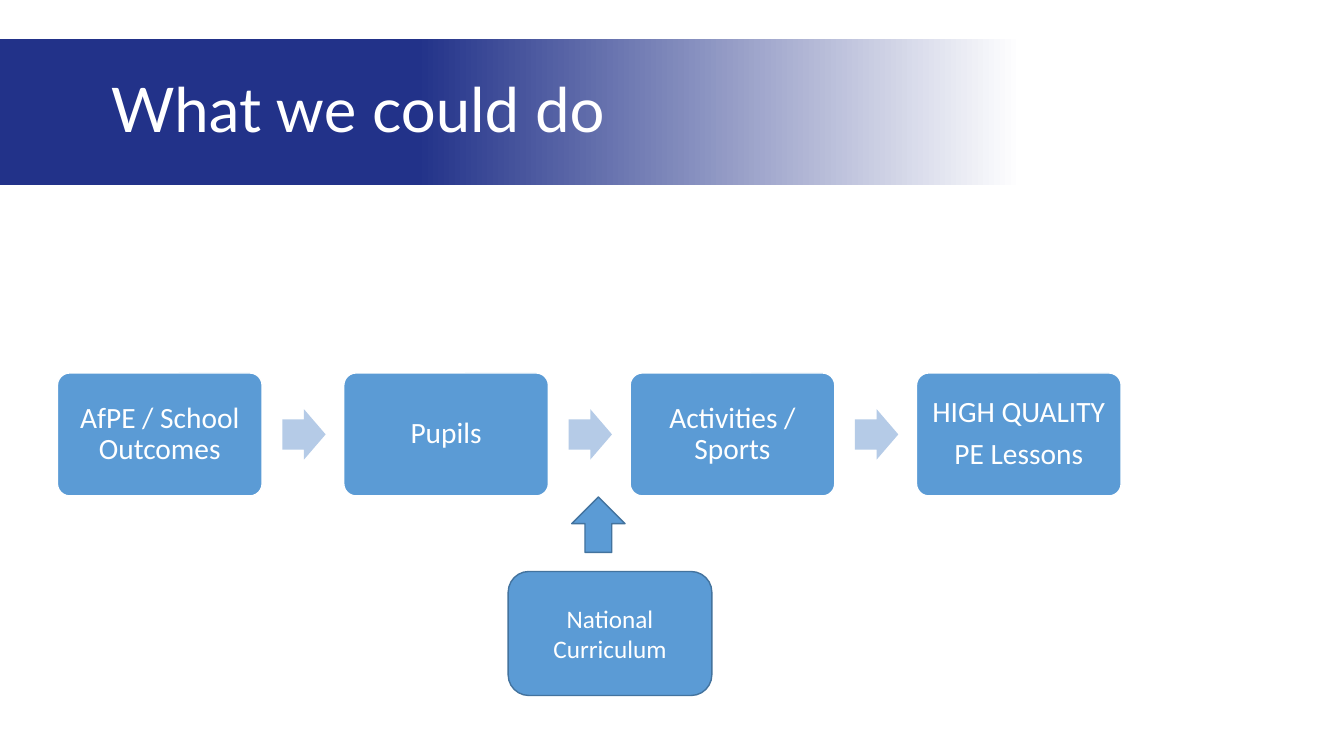
from copy import deepcopy
from pptx import Presentation
from pptx.dml.color import RGBColor
from pptx.enum.shapes import MSO_SHAPE as Kind
from pptx.enum.text import MSO_ANCHOR as Anchor, MSO_AUTO_SIZE as Fit, PP_ALIGN as Align
from pptx.util import Inches, Pt

TITLE = "What we could do"
STEPS = [["AfPE / School Outcomes"], ["Pupils"], ["Activities / Sports"],
         ["HIGH QUALITY", "PE Lessons"]]
INPUT = ["National Curriculum"]

WHITE = RGBColor(0xFF, 0xFF, 0xFF)
NAVY = RGBColor(0x22, 0x32, 0x89)
BLUE = RGBColor(0x5B, 0x9B, 0xD5)
PALE = RGBColor(0xB5, 0xCB, 0xE7)
EDGE = RGBColor(0x43, 0x73, 0x9E)
FADE = [(0, NAVY), (0.31, NAVY), (0.76, WHITE), (1, WHITE)]

LEFT, PITCH = 0.57, 2.84


def add_title(slide):
    """Turn the title placeholder into a fading banner."""
    title = slide.shapes.title
    title.left, title.top = Inches(0), Inches(0.39)
    title.width, title.height = Inches(13.33), Inches(1.45)
    fill = title.fill
    fill.gradient()
    fill.gradient_angle = 0
    for stop in title._element.xpath(".//a:gs"):
        stop.addnext(deepcopy(stop))
    for stop, (place, color) in zip(fill.gradient_stops, FADE):
        stop.position = place
        stop.color.rgb = color
    frame = title.text_frame
    frame.text = TITLE
    frame.auto_size = Fit.NONE
    frame.vertical_anchor = Anchor.MIDDLE
    frame.margin_left = Inches(1.1)
    para = frame.paragraphs[0]
    para.alignment = Align.LEFT
    para.line_spacing = 0.9
    para.font.name, para.font.size = "Lato", Pt(44)
    para.font.color.rgb = WHITE


def add_block(slide, kind, place, color, edge=None):
    """Add a plain filled shape, outlined if an edge colour is given."""
    block = slide.shapes.add_shape(kind, *map(Inches, place))
    block.shadow.inherit = False
    block.fill.solid()
    block.fill.fore_color.rgb = color
    if edge is None:
        block.line.fill.background()
    else:
        block.line.color.rgb = edge
        block.line.width = Pt(1)
    return block


def add_text(block, lines, size, pad, space=1.0, after=0):
    """Write centred lines into a block."""
    frame = block.text_frame
    frame.word_wrap = True
    frame.vertical_anchor = Anchor.MIDDLE
    frame.margin_left = frame.margin_right = Inches(pad)
    frame.text = "\n".join(lines)
    for para in frame.paragraphs:
        para.alignment = Align.CENTER
        para.line_spacing = space
        para.space_after = Pt(after)
        para.font.name, para.font.size = "Calibri", Pt(size)
        para.font.color.rgb = WHITE


def main():
    """Build the lesson planning slide."""
    deck = Presentation()
    deck.slide_width, deck.slide_height = Inches(13.33), Inches(7.5)
    slide = deck.slides.add_slide(deck.slide_layouts[5])
    add_title(slide)

    for i, lines in enumerate(STEPS):
        x = LEFT + i * PITCH
        if i:
            arrow = add_block(slide, Kind.RIGHT_ARROW, (x - 0.61, 4.06, 0.43, 0.5), PALE)
            arrow.adjustments[0] = 0.6
        box = add_block(slide, Kind.ROUNDED_RECTANGLE, (x, 3.7, 2.03, 1.22), BLUE, WHITE)
        box.adjustments[0] = 0.1
        add_text(box, lines, 21, 0.12, 0.9, 7.35)

    source = add_block(slide, Kind.ROUNDED_RECTANGLE, (5.04, 5.67, 2.02, 1.23), BLUE, EDGE)
    add_text(source, INPUT, 18, 0.1)
    add_block(slide, Kind.UP_ARROW, (5.67, 4.93, 0.53, 0.55), BLUE, EDGE)
    deck.save("out.pptx")


if __name__ == "__main__":
    main()
